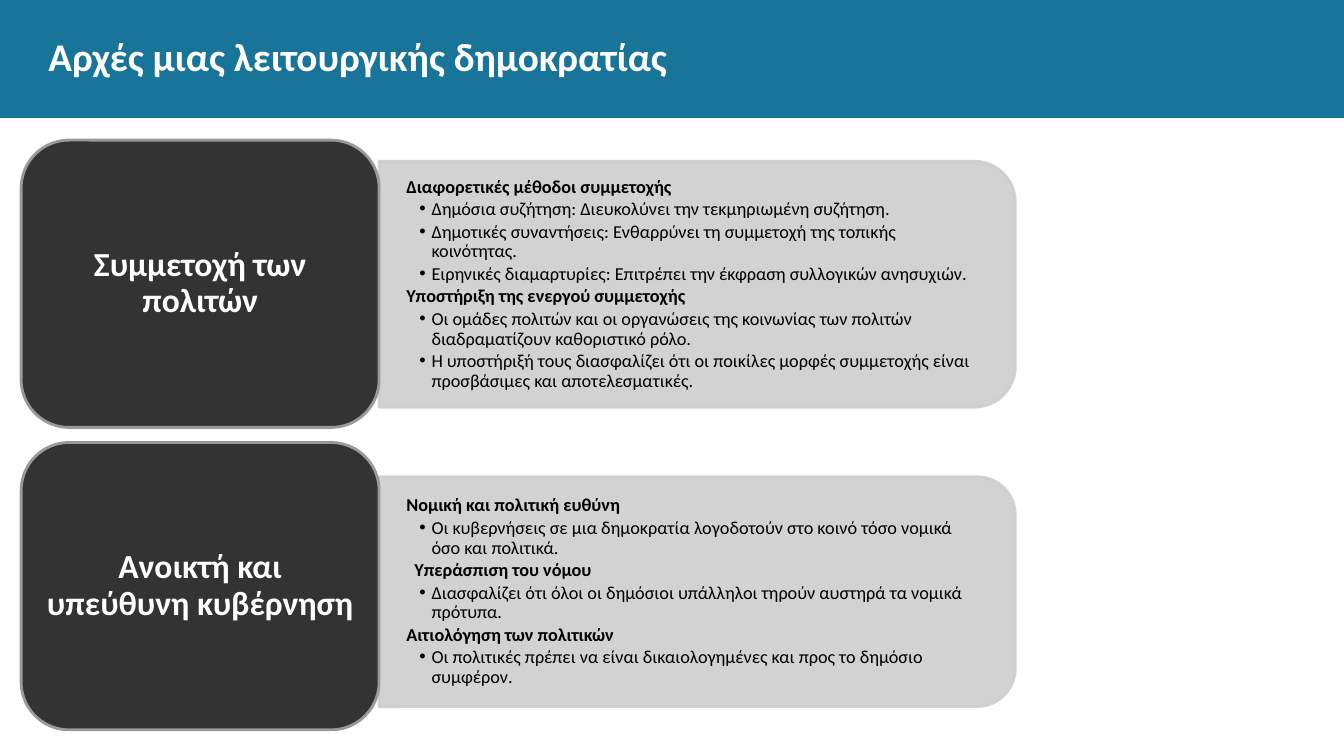
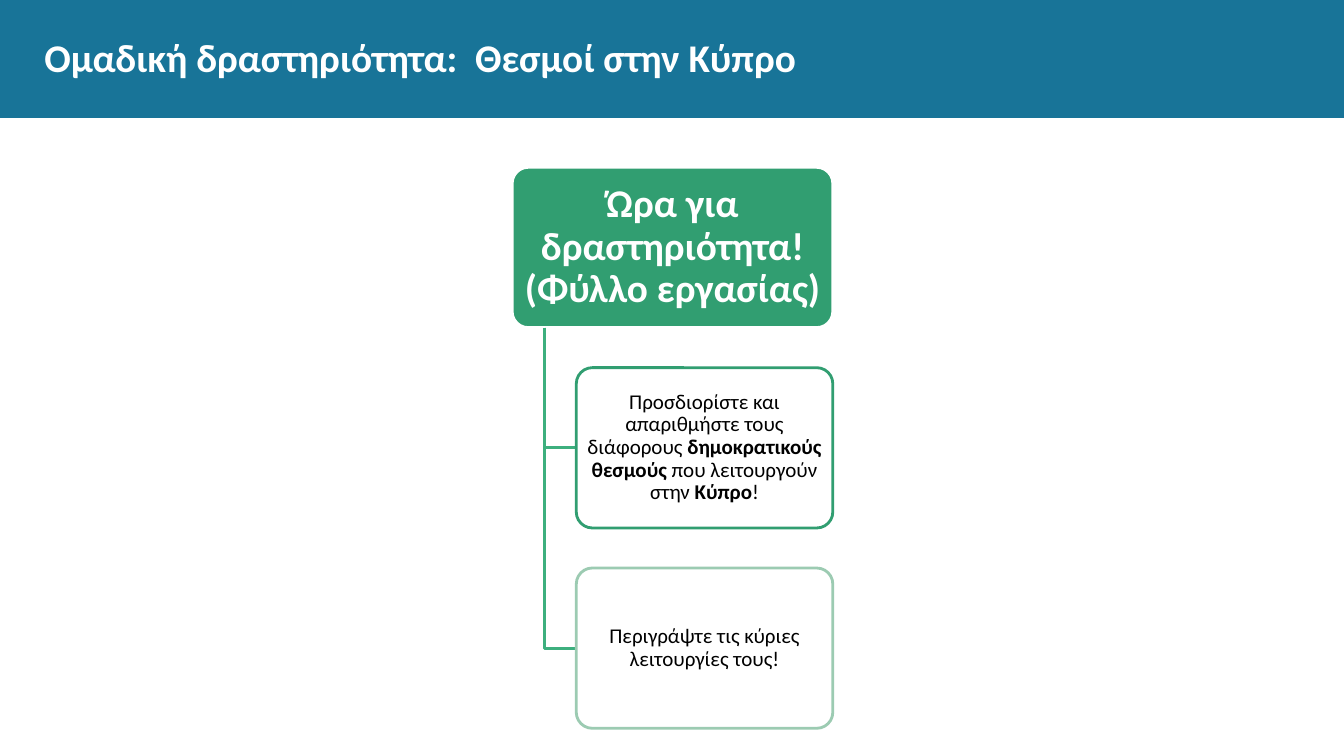
from lxml.etree import SubElement
from pptx import Presentation
from pptx.dml.color import RGBColor
from pptx.enum.shapes import MSO_SHAPE as Shape
from pptx.enum.text import MSO_ANCHOR as Anchor, PP_ALIGN as Align
from pptx.oxml.ns import qn
from pptx.util import Inches, Pt

BLUE = RGBColor(0x18, 0x74, 0x98)
WHITE = RGBColor(0xFF, 0xFF, 0xFF)
BLACK = RGBColor(0x00, 0x00, 0x00)
CHARCOAL = RGBColor(0x33, 0x33, 0x33)
GREY = RGBColor(0x99, 0x99, 0x99)
SILVER = RGBColor(0xCE, 0xCE, 0xCE)
GREEN = RGBColor(0x31, 0x9E, 0x71)
BRANCH_GREEN = RGBColor(0x3D, 0xAF, 0x7E)
PALE_GREEN = RGBColor(0x9C, 0xCB, 0xB2)


class Deck:
    """Holds the shared style and the slide being built."""

    FONT = "Calibri"
    WIDTH, HEIGHT, BAND_HEIGHT = 13.33, 7.5, 1.17
    LINE_WIDTH = Pt(2)

    def __init__(self):
        self.prs = Presentation()
        self.prs.slide_width = Inches(self.WIDTH)
        self.prs.slide_height = Inches(self.HEIGHT)
        self.slide = None

    def new_slide(self, title, left, top):
        self.slide = self.prs.slides.add_slide(self.prs.slide_layouts[6])
        self.box(Shape.RECTANGLE, 0, 0, self.WIDTH, self.BAND_HEIGHT, BLUE)
        frame = self.text_area(left, top, 12.46, 0.74, 0, 0)
        frame.text = title
        self.style(frame.paragraphs[0], 28, WHITE, bold=True)

    def box(self, kind, left, top, width, height, fill, line=None, alpha=None):
        shape = self.slide.shapes.add_shape(
            kind, Inches(left), Inches(top), Inches(width), Inches(height))
        shape.shadow.inherit = False
        shape.fill.solid()
        shape.fill.fore_color.rgb = fill
        if line is None:
            shape.line.fill.background()
        else:
            shape.line.color.rgb = line
            shape.line.width = self.LINE_WIDTH
        if alpha is not None:
            for color in shape._element.spPr.iter(qn("a:srgbClr")):
                if color.getparent().getparent().tag == qn("p:spPr") or line == fill:
                    SubElement(color, qn("a:alpha"), val=str(alpha * 1000))
        return shape

    def text_area(self, left, top, width, height, inset_x, inset_y):
        frame = self.slide.shapes.add_textbox(
            Inches(left), Inches(top), Inches(width), Inches(height)).text_frame
        self.set_frame(frame, inset_x, inset_y)
        return frame

    def set_frame(self, frame, inset_x, inset_y):
        frame.word_wrap = True
        frame.vertical_anchor = Anchor.MIDDLE
        frame.margin_left = frame.margin_right = Inches(inset_x)
        frame.margin_top = frame.margin_bottom = Inches(inset_y)

    def style(self, paragraph, size, color, bold=False):
        for run in paragraph.runs:
            run.font.name = self.FONT
            run.font.size = Pt(size)
            run.font.color.rgb = color
            run.font.bold = bold

    def label(self, shape, parts, size, color, inset_x, inset_y, bold=False):
        """Centre the parts in a shape; every second part is bold."""
        self.set_frame(shape.text_frame, inset_x, inset_y)
        paragraph = shape.text_frame.paragraphs[0]
        paragraph.alignment = Align.CENTER
        paragraph.line_spacing = 0.9
        for part in parts:
            paragraph.add_run().text = part
        self.style(paragraph, size, color, bold)
        for run in paragraph.runs[1::2]:
            run.font.bold = True

    def pillar(self, top, name):
        block = self.box(Shape.ROUNDED_RECTANGLE, 0.21, top, 3.55, 2.85, CHARCOAL, GREY)
        self.label(block, [name], 24, WHITE, 0.1, 0.05, bold=True)

    def panel(self, middle, height, points):
        """Grey panel rounded on its right side, with headings and bullets."""
        left, length = 3.76, 6.31
        panel = self.box(Shape.ROUND_2_SAME_RECTANGLE, left + (length - height) / 2,
                         middle - length / 2, height, length, SILVER, SILVER, alpha=90)
        panel.rotation = 90
        text_height = height - 0.23
        frame = self.text_area(left, middle - text_height / 2, 6.19, text_height, 0.27, 0.14)
        for index, (text, is_heading, shift) in enumerate(points):
            paragraph = frame.paragraphs[0] if index == 0 else frame.add_paragraph()
            paragraph.text = text
            paragraph.line_spacing = 0.9
            paragraph.space_after = Pt(2)
            self.style(paragraph, 13, BLACK, bold=is_heading)
            props = paragraph._p.get_or_add_pPr()
            props.set("marL", str(Inches((0.12 if is_heading else 0.25) + shift)))
            props.set("indent", str(Inches(-0.12)))
            if not is_heading:
                SubElement(props, qn("a:buFont"), typeface="Arial")
                SubElement(props, qn("a:buChar"), char="•")

    def card(self, left, top, width, height, fill, line, alpha=None):
        card = self.box(Shape.ROUNDED_RECTANGLE, left, top, width, height, fill, line, alpha)
        card.adjustments[0] = 0.1
        return card

    def branch(self, x, top, bottom, end_x):
        builder = self.slide.shapes.build_freeform(Inches(x), Inches(top))
        builder.add_line_segments(
            [(Inches(x), Inches(bottom)), (Inches(end_x), Inches(bottom))], close=False)
        elbow = builder.convert_to_shape()
        elbow.shadow.inherit = False
        elbow.fill.background()
        elbow.line.color.rgb = BRANCH_GREEN
        elbow.line.width = self.LINE_WIDTH


def heading(text, shift=0):
    return text, True, shift


def bullet(text):
    return text, False, 0


def principles_slide(deck):
    deck.new_slide("Αρχές μιας λειτουργικής δημοκρατίας", 0.48, 0.18)

    # Pillar top, pillar name, panel middle, panel height, panel text
    principles = [
        (1.39, "Συμμετοχή των πολιτών", 2.82, 2.44, [
            heading("Διαφορετικές μέθοδοι συμμετοχής"),
            bullet("Δημόσια συζήτηση: Διευκολύνει την τεκμηριωμένη συζήτηση."),
            bullet("Δημοτικές συναντήσεις: Ενθαρρύνει τη συμμετοχή της τοπικής κοινότητας."),
            bullet("Ειρηνικές διαμαρτυρίες: Επιτρέπει την έκφραση συλλογικών ανησυχιών."),
            heading("Υποστήριξη της ενεργού συμμετοχής"),
            bullet("Οι ομάδες πολιτών και οι οργανώσεις της κοινωνίας των πολιτών "
                   "διαδραματίζουν καθοριστικό ρόλο."),
            bullet("Η υποστήριξή τους διασφαλίζει ότι οι ποικίλες μορφές συμμετοχής είναι "
                   "προσβάσιμες και αποτελεσματικές."),
        ]),
        (4.39, "Ανοικτή και υπεύθυνη κυβέρνηση", 5.87, 2.28, [
            heading("Νομική και πολιτική ευθύνη"),
            bullet("Οι κυβερνήσεις σε μια δημοκρατία λογοδοτούν στο κοινό τόσο νομικά "
                   "όσο και πολιτικά."),
            heading("Υπεράσπιση του νόμου", shift=0.08),
            bullet("Διασφαλίζει ότι όλοι οι δημόσιοι υπάλληλοι τηρούν αυστηρά τα νομικά "
                   "πρότυπα."),
            heading("Αιτιολόγηση των πολιτικών"),
            bullet("Οι πολιτικές πρέπει να είναι δικαιολογημένες και προς το δημόσιο "
                   "συμφέρον."),
        ]),
    ]
    for top, name, middle, height, points in principles:
        deck.panel(middle, height, points)
        deck.pillar(top, name)


def activity_slide(deck):
    deck.new_slide("Ομαδική δραστηριότητα:  Θεσμοί στην Κύπρο", 0.44, 0.19)

    # Activity card; the tasks hang below it, a quarter card apart
    left, top, width, height = 5.08, 1.66, 3.18, 1.59
    step = height * 1.25
    activity = deck.card(left, top, width, height, GREEN, WHITE)
    deck.label(activity, ["Ώρα για δραστηριότητα! (Φύλλο εργασίας)"],
               28, WHITE, 0.06, 0.04, bold=True)

    # Tasks
    tasks = [
        (GREEN, ["Προσδιορίστε και απαριθμήστε τους διάφορους ", "δημοκρατικούς θεσμούς ",
                 "που λειτουργούν στην ", "Κύπρο", "!"]),
        (PALE_GREEN, ["Περιγράψτε τις κύριες λειτουργίες τους!"]),
    ]
    branch_x, task_left = left + width * 0.1, left + width * 0.2
    for number, (outline, parts) in enumerate(tasks, start=1):
        task_top = top + number * step
        deck.branch(branch_x, top + height, task_top + height / 2, task_left)
        task = deck.card(task_left, task_top, width * 0.8, height, WHITE, outline, alpha=90)
        deck.label(task, parts, 15, BLACK, 0.03, 0.02)


def main():
    deck = Deck()
    principles_slide(deck)
    activity_slide(deck)
    deck.prs.save("out.pptx")


if __name__ == "__main__":
    main()
